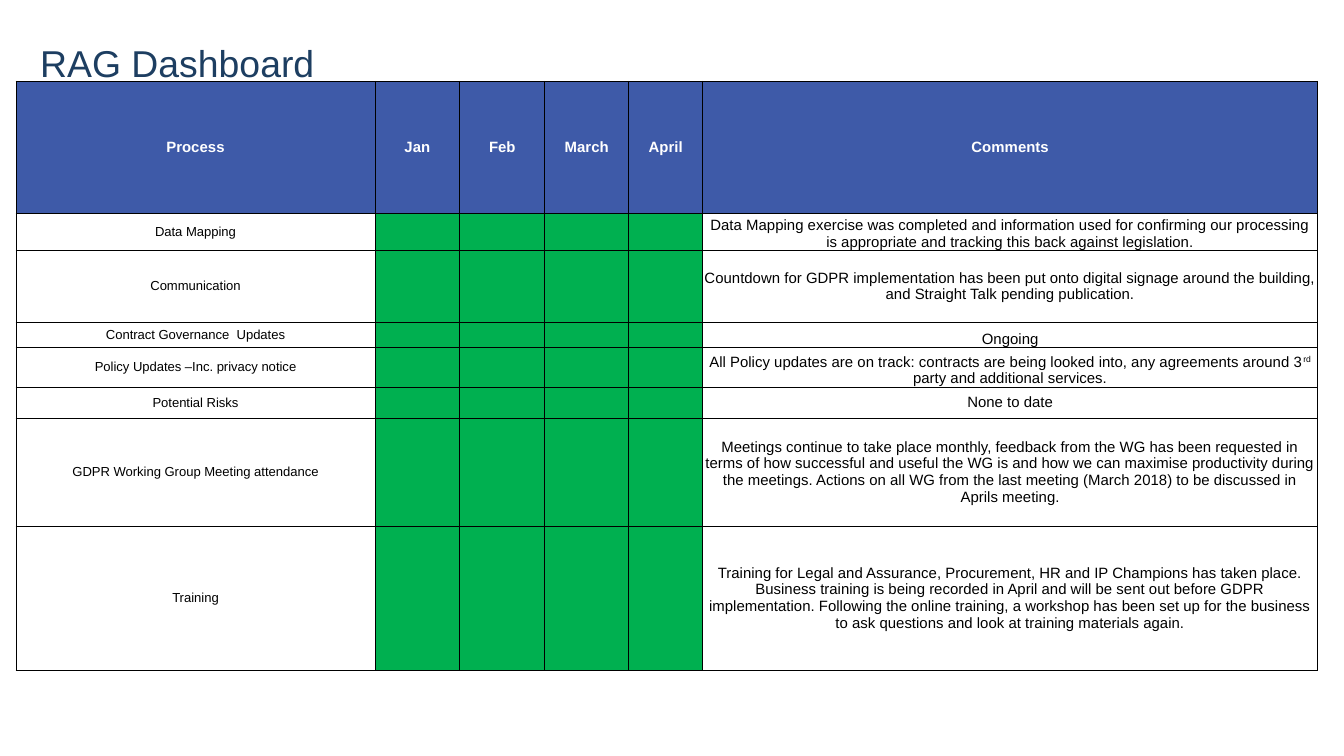
from lxml.etree import SubElement
from pptx import Presentation
from pptx.dml.color import RGBColor
from pptx.enum.text import MSO_ANCHOR, PP_ALIGN
from pptx.oxml.ns import qn
from pptx.util import Pt

TITLE = "RAG Dashboard"
HEADS = ["Process", "Jan", "Feb", "March", "April", "Comments"]
MID, LOW = MSO_ANCHOR.MIDDLE, MSO_ANCHOR.BOTTOM

# process, row height, comment anchor, comment runs as (text, raised)
ROWS = [
    ("Data Mapping", 19.8, LOW, [
        ("Data Mapping exercise was completed and information used for confirming "
         "our processing is appropriate and tracking this back against legislation.", False)]),
    ("Communication", 38.6, MID, [
        ("Countdown for GDPR implementation has been put onto digital signage around "
         "the building, and Straight Talk pending publication.", False)]),
    ("Contract Governance  Updates", 13.4, LOW, [("Ongoing", False)]),
    ("Policy Updates –Inc. privacy notice", 21.4, LOW, [
        ("All Policy updates are on track: contracts are being looked into, "
         "any agreements around 3", False),
        ("rd", True),
        (" party and additional services.", False)]),
    ("Potential Risks", 16.6, MID, [("None to date", False)]),
    ("GDPR Working Group Meeting attendance", 57.9, MID, [
        ("Meetings continue to take place monthly, feedback from the WG has been "
         "requested in terms of how successful and useful the WG is and how we can "
         "maximise productivity during the meetings. Actions on all WG from the last "
         "meeting (March 2018) to be discussed in Aprils meeting.", False)]),
    ("Training", 77.1, MID, [
        ("Training for Legal and Assurance, Procurement, HR and IP Champions has taken "
         "place. Business training is being recorded in April and will be sent out "
         "before GDPR implementation. Following the online training, a workshop has "
         "been set up for the business to ask questions and look at training materials "
         "again.", False)]),
]
WIDTHS = [192.3, 45.5, 45.5, 45, 39.6, 329.5]
HEAD_H = 70.7
COLORS = {"title": "1D3E61", "head": "3E5AA8", "green": "00B050",
          "white": "FFFFFF", "black": "000000"}


def hue(name):
    return RGBColor.from_string(COLORS[name])


def write(para, text, size, color, bold=False, raised=False):
    run = para.add_run()
    run.text = text
    font = run.font
    font.name, font.size, font.bold = "Arial", Pt(size), bold
    font.color.rgb = hue(color)
    if raised:
        run._r.get_or_add_rPr().set("baseline", "30000")


def border(cell):
    props = cell._tc.get_or_add_tcPr()
    for i, side in enumerate(("a:lnL", "a:lnR", "a:lnT", "a:lnB")):
        line = props.makeelement(qn(side), {"w": str(Pt(0.5))})
        fill = SubElement(line, qn("a:solidFill"))
        SubElement(fill, qn("a:srgbClr"), val=COLORS["black"])
        props.insert(i, line)


def style(cell, fill, anchor=MID):
    """Format a cell and return its centred paragraph."""
    cell.fill.solid()
    cell.fill.fore_color.rgb = hue(fill)
    cell.margin_left = cell.margin_right = Pt(0.7)
    cell.margin_top = cell.margin_bottom = Pt(0)
    cell.vertical_anchor = anchor
    border(cell)
    para = cell.text_frame.paragraphs[0]
    para.alignment = PP_ALIGN.CENTER
    return para


deck = Presentation()
deck.slide_width, deck.slide_height = Pt(720), Pt(405)
slide = deck.slides.add_slide(deck.slide_layouts[6])

frame = slide.shapes.add_textbox(Pt(14.4), Pt(17), Pt(663), Pt(32)).text_frame
frame.word_wrap = True
frame.vertical_anchor = LOW
write(frame.paragraphs[0], TITLE, 20, "title")

heights = [HEAD_H] + [row[1] for row in ROWS]
table = slide.shapes.add_table(
    len(heights), len(WIDTHS), Pt(8.6), Pt(43.6),
    Pt(sum(WIDTHS)), Pt(sum(heights))).table
for col, width in zip(table.columns, WIDTHS):
    col.width = Pt(width)
for row, height in zip(table.rows, heights):
    row.height = Pt(height)

for c, head in enumerate(HEADS):
    write(style(table.cell(0, c), "head"), head, 8, "white", bold=True)

last = len(HEADS) - 1
for r, (name, _, anchor, runs) in enumerate(ROWS, 1):
    write(style(table.cell(r, 0), "white"), name, 7, "black")
    for c in range(1, last):
        para = style(table.cell(r, c), "green")
        # keeps an empty cell from stretching its row
        SubElement(para._p, qn("a:endParaRPr"), sz="700")
    para = style(table.cell(r, last), "white", anchor)
    for text, raised in runs:
        write(para, text, 8, "black", raised=raised)

deck.save("out.pptx")
